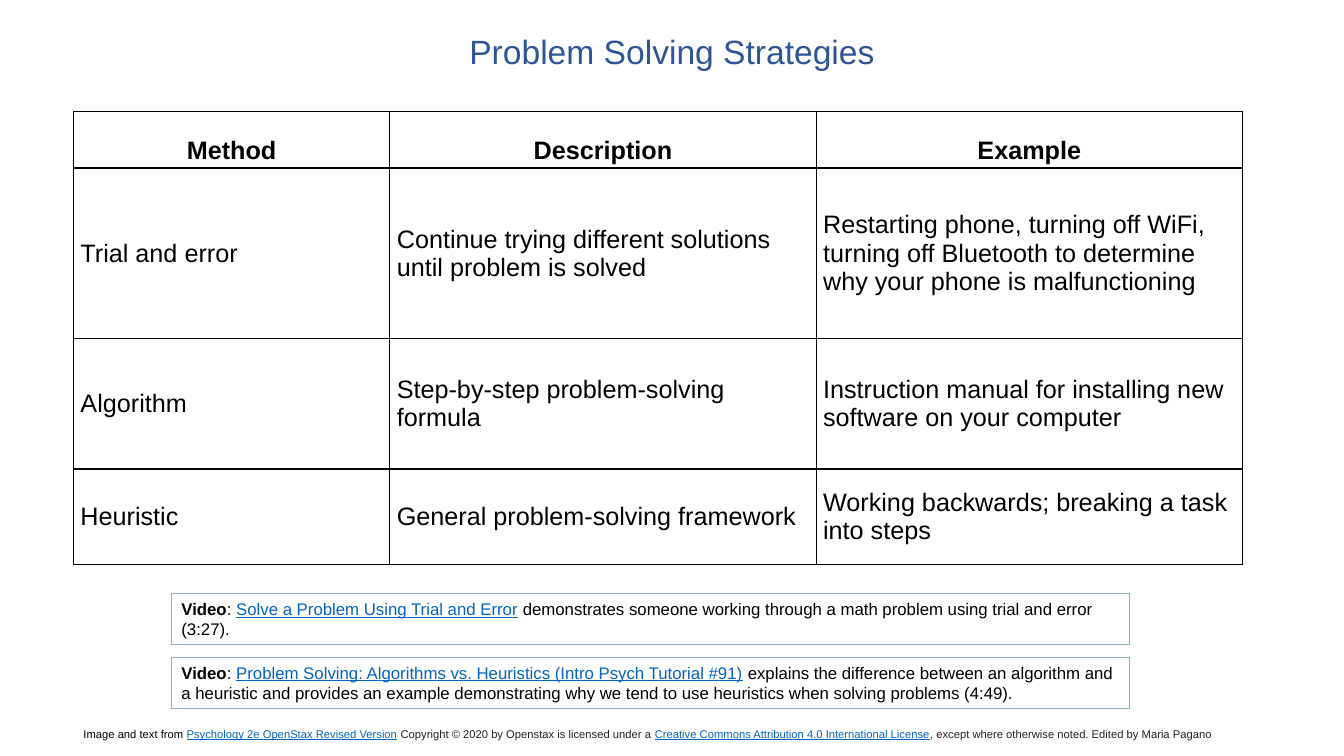
from lxml import etree
from pptx import Presentation
from pptx import util as u
from pptx.dml import color
from pptx.enum import shapes, text
from pptx.oxml import ns

COLORS = {
    "title": "2F5597",
    "ink": "000000",
    "link": "0563C1",
    "credit": "222222",
    "frame": "8FAADC",
}
LINK = {"color": "link", "underline": True}
CREDIT = {"color": "credit"}
BOLD = {"bold": True}

ROWS = [
    ["Method", "Description", "Example"],
    [
        "Trial and error",
        "Continue trying different solutions until problem is solved",
        "Restarting phone, turning off WiFi, turning off Bluetooth to determine "
        "why your phone is malfunctioning",
    ],
    [
        "Algorithm",
        "Step-by-step problem-solving formula",
        "Instruction manual for installing new software on your computer",
    ],
    [
        "Heuristic",
        "General problem-solving framework",
        "Working backwards; breaking a task into steps",
    ],
]
VIDEOS = [
    (
        "Solve a Problem Using Trial and Error",
        " demonstrates someone working through a math problem using trial and error (3:27).",
    ),
    (
        "Problem Solving: Algorithms vs. Heuristics (Intro Psych Tutorial #91)",
        " explains the difference between an algorithm and a heuristic and provides an "
        "example demonstrating why we tend to use heuristics when solving problems (4:49).",
    ),
]
CREDITS = [
    ("Image and text from ", {}),
    ("Psychology 2e OpenStax Revised Version", LINK),
    (" Copyright © 2020 by Openstax is licensed under a ", CREDIT),
    ("Creative Commons Attribution 4.0 International License", LINK),
    (", except where otherwise noted. Edited by Maria Pagano", CREDIT),
]


def rgb(name):
    return color.RGBColor.from_string(COLORS[name])


def set_all(target, values):
    for name, value in values.items():
        setattr(target, name, value)


def write(frame, spans, size, **para_format):
    para = frame.paragraphs[0]
    set_all(para, {"alignment": text.PP_ALIGN.LEFT, **para_format})
    for words, look in spans:
        span = para.add_run()
        span.text = words
        values = {"name": "Arial", "size": u.Pt(size), **look}
        span.font.color.rgb = rgb(values.pop("color", "ink"))
        set_all(span.font, values)


def add_text(page, box, spans, size, **para_format):
    frame = page.shapes.add_textbox(*map(u.Pt, box)).text_frame
    frame.word_wrap = True
    write(frame, spans, size, **para_format)


def border_cell(cell):
    props = cell._tc.get_or_add_tcPr()
    for side in ("lnL", "lnR", "lnT", "lnB"):
        line = etree.SubElement(props, ns.qn(f"a:{side}"), w=str(u.Pt(1)))
        fill = etree.SubElement(line, ns.qn("a:solidFill"))
        etree.SubElement(fill, ns.qn("a:srgbClr"), val=COLORS["ink"])


def add_strategies(page, box, widths, heights):
    table = page.shapes.add_table(len(heights), len(widths), *map(u.Pt, box)).table
    set_all(table, {"first_row": False, "horz_banding": False})
    for column, width in zip(table.columns, widths):
        column.width = u.Pt(width)
    for index, (row, height, labels) in enumerate(zip(table.rows, heights, ROWS)):
        row.height = u.Pt(height)
        header = index == 0
        anchor = text.MSO_ANCHOR.BOTTOM if header else text.MSO_ANCHOR.MIDDLE
        align = text.PP_ALIGN.CENTER if header else text.PP_ALIGN.LEFT
        for cell, label in zip(row.cells, labels):
            border_cell(cell)
            cell.fill.background()
            set_all(cell, {
                "vertical_anchor": anchor,
                "margin_left": u.Pt(5),
                "margin_right": u.Pt(5),
                "margin_top": u.Pt(2.5),
                "margin_bottom": u.Pt(2.5),
            })
            write(cell.text_frame, [(label, {"bold": header})], 18, alignment=align)


def add_videos(page, box, gap):
    left, top, width, height = box
    for index, (name, summary) in enumerate(VIDEOS):
        place = (left, top + index * (height + gap), width, height)
        panel = page.shapes.add_shape(shapes.MSO_SHAPE.RECTANGLE, *map(u.Pt, place))
        panel.shadow.inherit = False
        panel.fill.background()
        panel.line.color.rgb = rgb("frame")
        panel.line.width = u.Pt(0.75)
        set_all(panel.text_frame, {
            "word_wrap": True,
            "vertical_anchor": text.MSO_ANCHOR.TOP,
        })
        spans = [("Video", BOLD), (": ", {}), (name, LINK), (summary, {})]
        write(panel.text_frame, spans, 12)


def main():
    deck = Presentation()
    set_all(deck, {"slide_width": u.Pt(960), "slide_height": u.Pt(540)})
    page = deck.slides.add_slide(deck.slide_layouts[6])
    add_text(page, (91, 21.5, 778, 36),
             [("Problem Solving Strategies", {"color": "title"})], 24,
             alignment=text.PP_ALIGN.CENTER, line_spacing=0.9)
    add_strategies(page, (52.5, 79.5, 835, 324),
                   (226, 304.5, 304.5), (40.5, 122, 93, 68.5))
    add_videos(page, (122.5, 424, 684, 36.5), 9)
    add_text(page, (52.5, 516, 855, 17), CREDITS, 8)
    deck.save("out.pptx")


if __name__ == "__main__":
    main()
